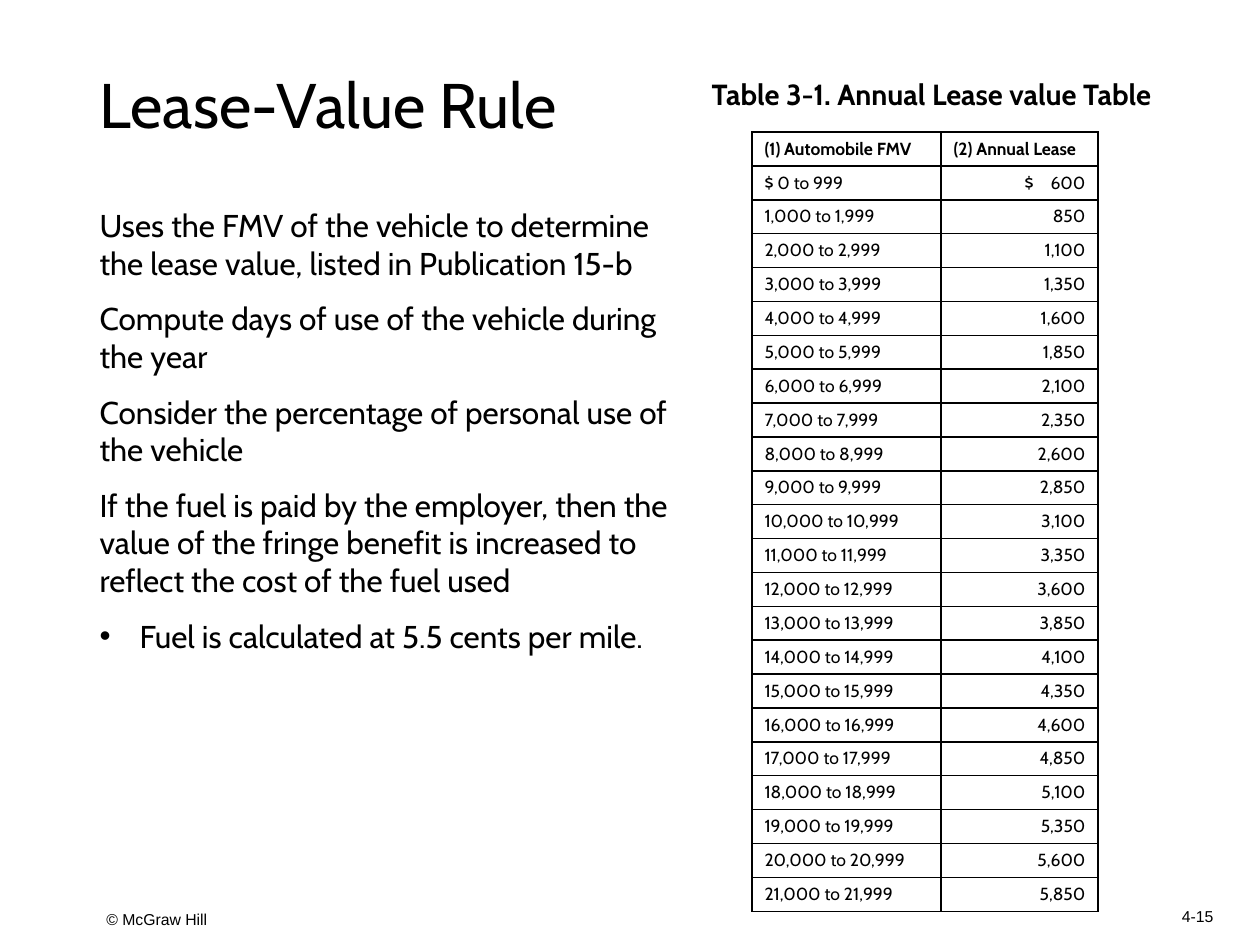
from dataclasses import dataclass, field

from lxml import etree
from pptx import Presentation
from pptx.dml.color import RGBColor
from pptx.enum.text import MSO_ANCHOR, MSO_AUTO_SIZE, PP_ALIGN
from pptx.oxml.ns import qn
from pptx.util import Emu, Pt

LEFT, CENTER, RIGHT = PP_ALIGN.LEFT, PP_ALIGN.CENTER, PP_ALIGN.RIGHT
TOP, MIDDLE = MSO_ANCHOR.TOP, MSO_ANCHOR.MIDDLE
NO_FIT = MSO_AUTO_SIZE.NONE
COLORS = {"text": "000000", "border": "000000", "page": "FFFFFF"}
EMU_PER_PX = 914400 / 126
TWO_CONTENT_LAYOUT = 3


def px(length: int) -> Emu:
    return Emu(round(length * EMU_PER_PX))


@dataclass(frozen=True)
class Box:
    left: int
    top: int
    width: int
    height: int


@dataclass(frozen=True)
class Style:
    size: float
    name: str = "Cabin"
    bold: bool = False
    format: dict = field(default_factory=dict)


@dataclass(frozen=True)
class Item:
    text: str
    bullet: str = ""
    indent: int = 0


TITLE = Style(36, format={"alignment": LEFT, "line_spacing": 0.9})
BODY = Style(18, format={"alignment": LEFT, "line_spacing": 1.0})
CAPTION = Style(16.6, bold=True, format={"alignment": LEFT, "line_spacing": 0.9})
FOOTER = Style(9, name="Arial", format={"alignment": LEFT})
NUMBER = Style(9, name="Arial", format={"alignment": CENTER})
HEADER = Style(10, bold=True, format={"alignment": LEFT})
RANGE = Style(10, format={"alignment": LEFT})
AMOUNT = Style(10, format={"alignment": RIGHT})

RULES = [
    Item("Uses the FMV of the vehicle to determine the lease value, "
         "listed in Publication 15-b"),
    Item("Compute days of use of the vehicle during the year"),
    Item("Consider the percentage of personal use of the vehicle"),
    Item("If the fuel is paid by the employer, then the value of the fringe "
         "benefit is increased to reflect the cost of the fuel used"),
    Item("Fuel is calculated at 5.5 cents per mile.", bullet="•", indent=40),
]

# Lease values rise by a fixed step for each band of automobile value
BAND_COUNT, BAND_WIDTH = 22, 1000
FIRST_LEASE, LEASE_STEP = 600, 250
COLUMN_WIDTHS = (189, 157)
ROW_HEIGHT = 33
TABLE_LEFT, TABLE_TOP = 752, 132


def style_font(font, style: Style) -> None:
    values = {"size": Pt(style.size), "name": style.name, "bold": style.bold}
    for key, value in values.items():
        setattr(font, key, value)
    font.color.rgb = RGBColor.from_string(COLORS["text"])


def write(para, text: str, style: Style) -> None:
    for key, value in style.format.items():
        setattr(para, key, value)
    span = para.add_run()
    span.text = text
    style_font(span.font, style)


def set_bullet(para, item: Item) -> None:
    settings = para._p.get_or_add_pPr()
    indent = px(item.indent)
    settings.set("marL", str(indent))
    settings.set("indent", str(-indent))
    if item.bullet:
        etree.SubElement(settings, qn("a:buChar"), char=item.bullet)
    else:
        etree.SubElement(settings, qn("a:buNone"))


def fill_box(shape, box: Box, items: list[Item], style: Style, anchor) -> None:
    for key in ("left", "top", "width", "height"):
        setattr(shape, key, px(getattr(box, key)))
    frame = shape.text_frame
    for key, value in {"word_wrap": True, "auto_size": NO_FIT,
                       "vertical_anchor": anchor}.items():
        setattr(frame, key, value)
    for index, item in enumerate(items):
        para = frame.add_paragraph() if index else frame.paragraphs[0]
        set_bullet(para, item)
        para.space_before = Pt(10 if index else 0)
        write(para, item.text, style)


def add_label(page, box: Box, text: str, style: Style) -> None:
    shape = page.shapes.add_textbox(0, 0, 0, 0)
    fill_box(shape, box, [Item(text)], style, MIDDLE)


def outline_cell(cell) -> None:
    cell.fill.background()
    settings = cell._tc.get_or_add_tcPr()
    for index, side in enumerate(("lnL", "lnR", "lnT", "lnB")):
        line = etree.Element(qn(f"a:{side}"), w=str(Pt(1)))
        fill = etree.SubElement(line, qn("a:solidFill"))
        etree.SubElement(fill, qn("a:srgbClr"), val=COLORS["border"])
        settings.insert(index, line)


def write_first_amount(para, amount: str) -> None:
    # One widened space sets the currency sign apart from the figure
    for text in ("$", " ", amount):
        write(para, text, AMOUNT)
    para.runs[1].font._element.set("spc", "750")


def add_lease_table(page) -> None:
    rows = BAND_COUNT + 1
    table = page.shapes.add_table(
        rows, len(COLUMN_WIDTHS), px(TABLE_LEFT), px(TABLE_TOP),
        px(sum(COLUMN_WIDTHS)), px(ROW_HEIGHT * rows)).table
    table.first_row = table.horz_banding = False
    for column, width in zip(table.columns, COLUMN_WIDTHS):
        column.width = px(width)
    for cell in table.iter_cells():
        outline_cell(cell)

    headings = ("(1) Automobile FMV", "(2) Annual Lease")
    for column, heading in enumerate(headings):
        write(table.cell(0, column).text_frame.paragraphs[0], heading, HEADER)
    for band in range(BAND_COUNT):
        start = band * BAND_WIDTH
        sign = "" if band else "$ "
        value, lease = (table.cell(band + 1, column).text_frame.paragraphs[0]
                        for column in range(2))
        write(value, f"{sign}{start:,} to {start + BAND_WIDTH - 1:,}", RANGE)
        amount = f"{FIRST_LEASE + band * LEASE_STEP:,}"
        if band:
            write(lease, amount, AMOUNT)
        else:
            write_first_amount(lease, amount)


def main() -> None:
    deck = Presentation()
    deck.slide_width, deck.slide_height = px(1260), px(945)
    page = deck.slides.add_slide(deck.slide_layouts[TWO_CONTENT_LAYOUT])
    page.background.fill.solid()
    page.background.fill.fore_color.rgb = RGBColor.from_string(COLORS["page"])

    # Title, rules and table caption
    title, body, caption = page.placeholders
    fill_box(title, Box(87, 50, 495, 116), [Item("Lease-Value Rule")], TITLE, MIDDLE)
    fill_box(body, Box(87, 200, 595, 501), RULES, BODY, TOP)
    fill_box(caption, Box(699, 74, 495, 45),
             [Item("Table 3-1. Annual Lease value Table")], CAPTION, TOP)

    add_lease_table(page)

    # Footer
    add_label(page, Box(94, 900, 1021, 39), "© McGraw Hill", FOOTER)
    add_label(page, Box(1145, 892, 105, 48), "4-15", NUMBER)
    deck.save("out.pptx")


if __name__ == "__main__":
    main()
